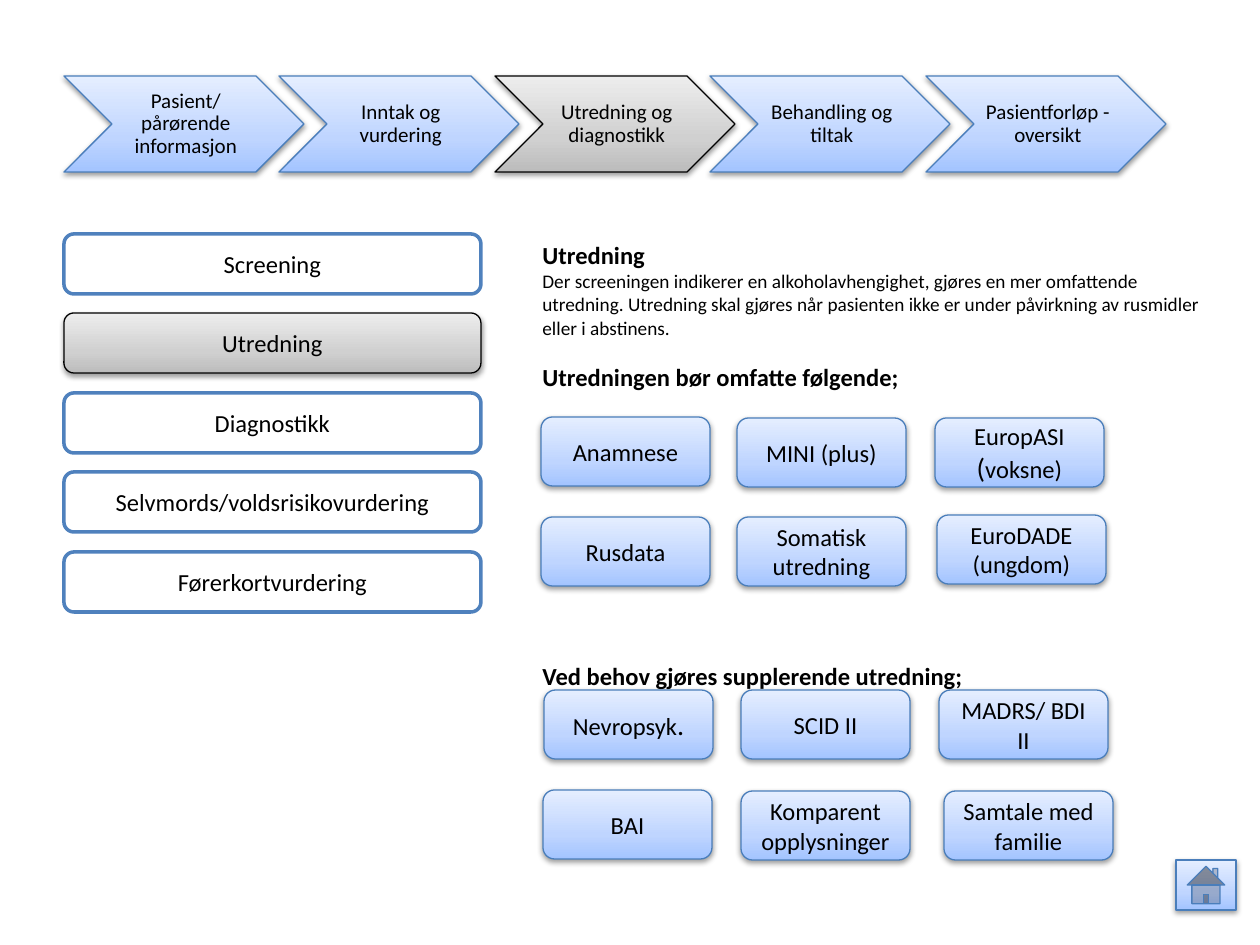
"""Build the clinical pathway slide on assessment and diagnostics."""
from pptx import Presentation
from pptx import oxml
from pptx import util as u
from pptx.dml import color
from pptx.enum import shapes, text
from pptx.oxml import ns

FONT = "Calibri"
BLUE = (("A3C4FF", "BFD5FF", "E5EEFF"), "4A7EBB")
GREY = (("BCBCBC", "D0D0D0", "EDEDED"), "000000")
STEPS = ["Pasient/ pårørende informasjon", "Inntak og vurdering",
         "Utredning og diagnostikk", "Behandling og tiltak",
         "Pasientforløp - oversikt"]
MENU = ["Screening", "Utredning", "Diagnostikk",
        "Selvmords/voldsrisikovurdering", "Førerkortvurdering"]
TILES = [
    (541, 417, "Anamnese"),
    (737, 418, "MINI (plus)"),
    (935, 418, "EuropASI", [("(", 16), ("voksne)", 14)]),
    (541, 517, "Rusdata"),
    (737, 517, "Somatisk utredning"),
    (937, 515, "EuroDADE (ungdom)"),
    (544, 690, [("Nevropsyk", 14), (".", 16)]),
    (741, 690, "SCID II"),
    (939, 690, "MADRS/ BDI II"),
    (543, 790, "BAI"),
    (741, 791, "Komparent opplysninger"),
    (944, 791, "Samtale med familie"),
]
BODY = [
    ("Utredning", 14, True, 0),
    ("Der screeningen indikerer en alkoholavhengighet, gjøres en mer "
     "omfattende utredning. Utredning skal gjøres når pasienten ikke er "
     "under påvirkning av rusmidler eller i abstinens.", 11, False, 0),
    ("Utredningen bør omfatte følgende;", 14, True, 13.4),
    ("Ved behov gjøres supplerende utredning;", 14, True, 153.8),
]


def px(*vals):
    """Turn px lengths into EMU."""
    return [u.Emu(round(v * 914400 / 126)) for v in vals]


def rgb(code):
    """Turn a hex string into a colour."""
    return color.RGBColor.from_string(code)


def style(font, size, bold=False):
    """Set the slide's font on a run or paragraph."""
    font.name, font.size, font.bold = FONT, u.Pt(size), bold
    font.color.rgb = rgb("000000")


def label(shape, lines, size=14):
    """Write centred lines, each a string or a list of sized parts."""
    frame = shape.text_frame
    frame.word_wrap = True
    frame.vertical_anchor = text.MSO_ANCHOR.MIDDLE
    for i, line in enumerate(lines):
        para = frame.add_paragraph() if i else frame.paragraphs[0]
        para.alignment = text.PP_ALIGN.CENTER
        if isinstance(line, str):
            para.text = line
            style(para.font, size)
            continue
        for part, pts in line:
            run = para.add_run()
            run.text = part
            style(run.font, pts)


def block(slide, kind, box, edge, width):
    """Add an outlined shape without shadow."""
    shape = slide.shapes.add_shape(kind, *px(*box))
    shape.shadow.inherit = False
    shape.line.color.rgb = rgb(edge)
    shape.line.width = u.Pt(width)
    return shape


def glossy(slide, kind, box, theme=BLUE):
    """Add a shape with a three-stop gradient and a soft shadow."""
    tones, edge = theme
    shape = block(slide, kind, box, edge, 0.75)
    stops = "".join(f'<a:gs pos="{pos}"><a:srgbClr val="{tone}"/></a:gs>'
                    for pos, tone in zip((0, 35000, 100000), tones))
    props = shape.element.spPr
    props.insert(2, oxml.parse_xml(
        f'<a:gradFill {ns.nsdecls("a")} rotWithShape="1"><a:gsLst>{stops}'
        '</a:gsLst><a:lin ang="16200000" scaled="0"/></a:gradFill>'))
    props.find(ns.qn("a:effectLst")).append(oxml.parse_xml(
        f'<a:outerShdw {ns.nsdecls("a")} blurRad="40000" dist="20000" '
        'dir="5400000" rotWithShape="0"><a:srgbClr val="000000">'
        '<a:alpha val="38000"/></a:srgbClr></a:outerShdw>'))
    return shape


def chevron(slide, i, name):
    """Add one step of the pathway."""
    box = (64 + i * 431 // 2, 76, 240, 96)
    shape = glossy(slide, shapes.MSO_SHAPE.CHEVRON, box,
                   GREY if i == 2 else BLUE)
    label(shape, [name], 12)
    frame = shape.text_frame
    frame.margin_left = u.Inches(0.05)
    frame.margin_top = frame.margin_right = frame.margin_bottom = u.Inches(0.02)
    frame.paragraphs[0].line_spacing = 0.9


def button(slide, i, name):
    """Add one entry of the side menu."""
    kind = shapes.MSO_SHAPE.ROUNDED_RECTANGLE
    box = (64, 234 + i * 159 // 2, 417, 60)
    if i == 1:
        shape = glossy(slide, kind, box, GREY)
    else:
        shape = block(slide, kind, box, "4F81BD", 2)
        shape.fill.solid()
        shape.fill.fore_color.rgb = rgb("FFFFFF")
    label(shape, [name])


def body(slide):
    """Add the explanatory text."""
    frame = slide.shapes.add_textbox(*px(530, 234, 694, 600)).text_frame
    frame.word_wrap = True
    frame.auto_size = text.MSO_AUTO_SIZE.SHAPE_TO_FIT_TEXT
    for i, (line, size, bold, gap) in enumerate(BODY):
        para = frame.add_paragraph() if i else frame.paragraphs[0]
        para.text = line
        style(para.font, size, bold)
        if gap:
            para.space_before = u.Pt(gap)


def main():
    """Build and save the slide."""
    deck = Presentation()
    deck.slide_width, deck.slide_height = px(1260, 945)
    slide = deck.slides.add_slide(deck.slide_layouts[6])
    for i, name in enumerate(STEPS):
        chevron(slide, i, name)
    for i, name in enumerate(MENU):
        button(slide, i, name)
    body(slide)
    for left, top, *lines in TILES:
        tile = glossy(slide, shapes.MSO_SHAPE.ROUNDED_RECTANGLE,
                      (left, top, 169, 69))
        label(tile, lines)
    glossy(slide, shapes.MSO_SHAPE.ACTION_BUTTON_HOME, (1176, 860, 60, 50))
    deck.save("out.pptx")


if __name__ == "__main__":
    main()
